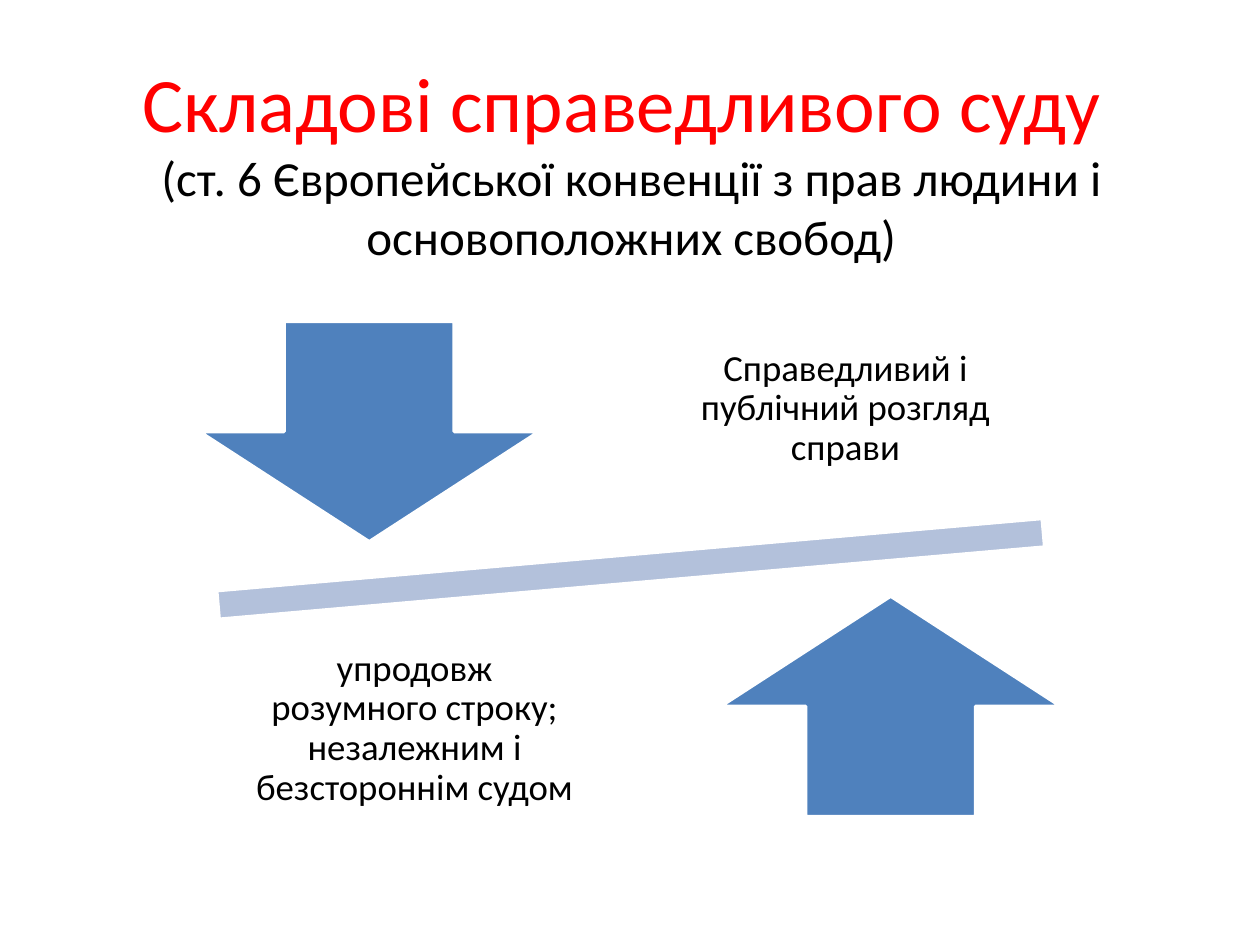
import pptx
import pptx.util
import pptx.dml.color
import pptx.enum.shapes
import pptx.enum.text

Pt = pptx.util.Pt
RGB = pptx.dml.color.RGBColor
Kind = pptx.enum.shapes.MSO_SHAPE

RED = RGB(0xFF, 0x00, 0x00)
BLACK = RGB(0x00, 0x00, 0x00)
WHITE = RGB(0xFF, 0xFF, 0xFF)
BLUE = RGB(0x4F, 0x81, 0xBD)
PALE = RGB(0xB3, 0xC1, 0xDB)


def apply(item, values):
    for name, value in values.items():
        setattr(item, name, value)


class Deck:
    """Hold the text style and the current slide, and draw elements on it."""

    font = "Calibri"

    def __init__(self, width, height):
        self.show = pptx.Presentation()
        apply(self.show, {"slide_width": Pt(width), "slide_height": Pt(height)})
        self.slide = self.show.slides.add_slide(self.show.slide_layouts[6])

    def text(self, box, lines, inset, **format):
        frame = self.slide.shapes.add_textbox(*map(Pt, box)).text_frame
        side, edge = map(Pt, inset)
        apply(frame, {
            "word_wrap": True,
            "vertical_anchor": pptx.enum.text.MSO_ANCHOR.MIDDLE,
            "margin_left": side, "margin_right": side,
            "margin_top": edge, "margin_bottom": edge,
        })
        para = frame.paragraphs[0]
        apply(para, {"alignment": pptx.enum.text.PP_ALIGN.CENTER, **format})
        for index, (words, size, color) in enumerate(lines):
            if index:
                para.add_line_break()
            run = para.add_run()
            run.text = words
            apply(run.font, {"name": self.font, "size": Pt(size)})
            run.font.color.rgb = color

    def shape(self, kind, box, fill, turn=0):
        shape = self.slide.shapes.add_shape(kind, *map(Pt, box))
        shape.rotation = turn
        shape.shadow.inherit = False
        shape.fill.solid()
        shape.fill.fore_color.rgb = fill
        shape.line.color.rgb = WHITE
        shape.line.width = Pt(2)

    def label(self, left, top, words):
        self.text((left, top, 207.4, 131.8), [(words, 21, BLACK)], (11.5, 11.5),
                  line_spacing=0.9, space_after=Pt(7.35))

    def arrow(self, kind, left, top):
        self.shape(kind, (left, top, 194.4, 126), BLUE)


def main():
    deck = Deck(720, 540)
    deck.text((36.7, 20.9, 648, 141.8), [
        ("Складові справедливого суду ", 44, RED),
        ("(ст. 6 Європейської конвенції з прав людини і основоположних свобод)", 28, BLACK),
    ], (7.2, 3.6))
    deck.shape(Kind.MATH_MINUS, (38.2, 290.2, 644.4, 69.8), PALE, 355)
    deck.arrow(Kind.DOWN_ARROW, 113.8, 183.6)
    deck.label(379.4, 167.8, "Справедливий і публічний розгляд справи")
    deck.arrow(Kind.UP_ARROW, 411.8, 340.6)
    deck.label(133.2, 350.6, "упродовж розумного строку; незалежним і безстороннім судом")
    deck.show.save("out.pptx")


if __name__ == "__main__":
    main()
